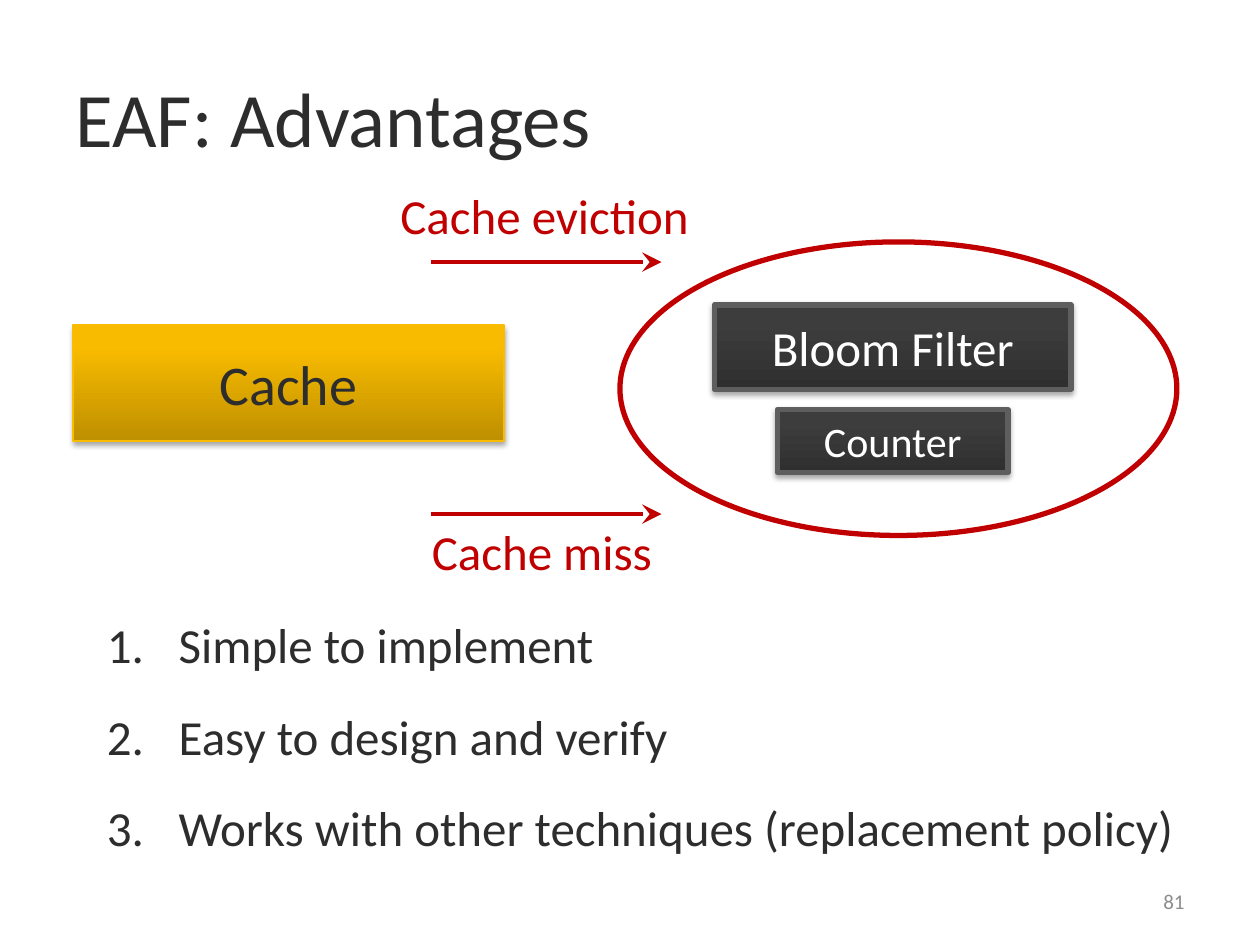
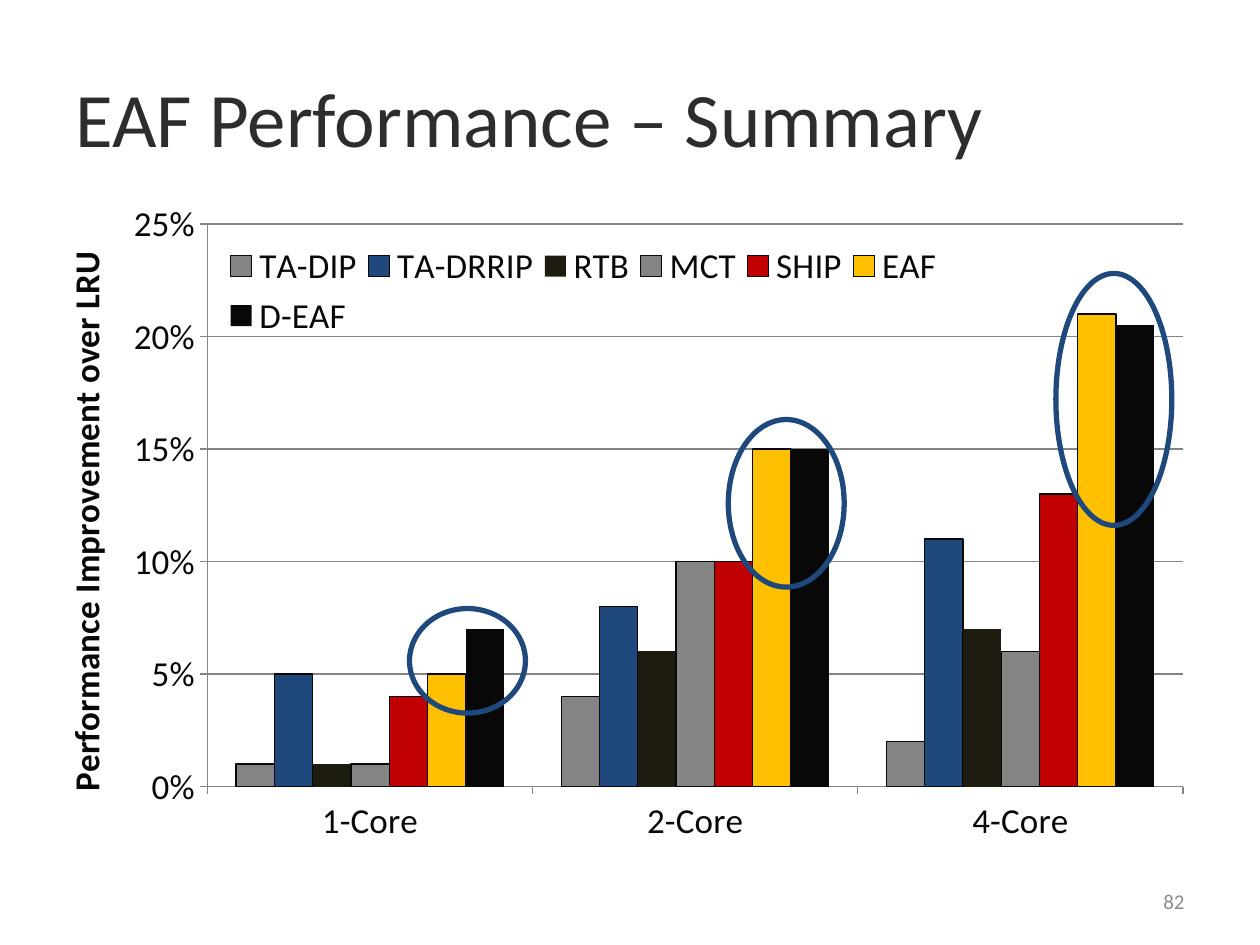
from lxml.etree import SubElement
from pptx import Presentation
from pptx.chart.data import CategoryChartData
from pptx.dml.color import RGBColor
from pptx.enum.chart import XL_CHART_TYPE as ChartType
from pptx.enum.chart import XL_LEGEND_POSITION as LegendPos
from pptx.enum.chart import XL_TICK_MARK as TickMark
from pptx.enum.shapes import MSO_CONNECTOR as Connector
from pptx.enum.shapes import MSO_SHAPE as Shape
from pptx.enum.text import MSO_ANCHOR as Anchor
from pptx.enum.text import MSO_AUTO_SIZE as AutoSize
from pptx.enum.text import PP_ALIGN as Align
from pptx.oxml.ns import qn
from pptx.util import Inches, Pt

# Shared look
FONT = "Calibri"
INK = RGBColor(0x2D, 0x2D, 0x2D)
WHITE = RGBColor(0xFF, 0xFF, 0xFF)
RED = RGBColor(0xC0, 0x00, 0x00)
NAVY = RGBColor(0x1F, 0x49, 0x7D)
NUMBER_GRAY = RGBColor(0x8C, 0x8C, 0x8C)
CHART_GRAY = RGBColor(0x84, 0x84, 0x84)
BLACK = RGBColor(0x08, 0x08, 0x08)
YELLOW = RGBColor(0xFF, 0xC0, 0x00)
OLIVE = RGBColor(0x1E, 0x1C, 0x11)

GOLD_BOX = {"bottom": RGBColor(0xBE, 0x8F, 0x00), "top": RGBColor(0xF8, 0xBB, 0x00),
            "edge": RGBColor(0xF9, 0xBC, 0x00), "edge_width": 0.75, "ink": INK}
DARK_BOX = {"bottom": RGBColor(0x2F, 0x2F, 0x2F), "top": RGBColor(0x3D, 0x3D, 0x3D),
            "edge": RGBColor(0x5E, 0x5E, 0x5E), "edge_width": 3, "ink": WHITE}

ADVANTAGES = ["Simple to implement", "Easy to design and verify",
              "Works with other techniques (replacement policy)"]
ADVANTAGE_WIDTHS = [4.1, 4.69, 8.76]

CORES = ["1-Core", "2-Core", "4-Core"]
# policy, improvement per core count, colour, outlined
POLICIES = [
    ("TA-DIP", (0.01, 0.04, 0.02), CHART_GRAY, True),
    ("TA-DRRIP", (0.05, 0.08, 0.11), NAVY, True),
    ("RTB", (0.01, 0.06, 0.07), OLIVE, False),
    ("MCT", (0.01, 0.1, 0.06), CHART_GRAY, True),
    ("SHIP", (0.04, 0.1, 0.13), RED, True),
    ("EAF", (0.05, 0.15, 0.21), YELLOW, True),
    ("D-EAF", (0.07, 0.15, 0.205), BLACK, False),
]


def place(*lengths):
    return [Inches(length) for length in lengths]


def set_font(font, size, color, **formats):
    font.color.rgb = color
    for name, value in {"name": FONT, "size": Pt(size), **formats}.items():
        setattr(font, name, value)


def write(frame, text, size, color, align=Align.LEFT):
    paragraph = frame.paragraphs[0]
    paragraph.alignment = align
    run = paragraph.add_run()
    run.text = text
    set_font(run.font, size, color)
    return paragraph


def add_titled_slide(prs, title_text, number):
    slide = prs.slides.add_slide(prs.slide_layouts[5])
    title = slide.shapes.title
    title.left, title.top, title.width, title.height = place(0.5, 0.3, 9, 1.25)
    title.text_frame.vertical_anchor = Anchor.MIDDLE
    title.text_frame.auto_size = AutoSize.NONE
    write(title.text_frame, title_text, 44, INK)

    footer = slide.shapes.add_textbox(*place(7.17, 6.95, 2.33, 0.4)).text_frame
    footer.word_wrap = True
    footer.vertical_anchor = Anchor.MIDDLE
    write(footer, str(number), 12, NUMBER_GRAY, Align.RIGHT)
    return slide


def add_label(slide, text, left, top, width, color):
    frame = slide.shapes.add_textbox(*place(left, top, width, 0.57)).text_frame
    frame.word_wrap = False
    frame.auto_size = AutoSize.SHAPE_TO_FIT_TEXT
    return write(frame, text, 28, color)


def add_numbered_label(slide, number, text, top, width):
    paragraph = add_label(slide, f"{number}.\t{text}", 0.75, top, width, INK)
    tabs = SubElement(paragraph._p.get_or_add_pPr(), qn("a:tabLst"))
    SubElement(tabs, qn("a:tab"), pos=str(Inches(0.57)), algn="l")


def add_block(slide, text, bounds, size, look):
    block = slide.shapes.add_shape(Shape.RECTANGLE, *place(*bounds))
    block.fill.gradient()
    block.fill.gradient_angle = 90
    stops = zip(block.fill.gradient_stops, (0, 0.8), (look["bottom"], look["top"]))
    for stop, position, color in stops:
        stop.position = position
        stop.color.rgb = color
    block.line.color.rgb = look["edge"]
    block.line.width = Pt(look["edge_width"])
    # Soft shadow straight below
    block.shadow.inherit = False
    effects = block._element.spPr.find(qn("a:effectLst"))
    shadow = SubElement(effects, qn("a:outerShdw"), blurRad=str(Pt(3.1)),
                        dist=str(Pt(1.8)), dir="5400000", rotWithShape="0")
    shade = SubElement(shadow, qn("a:srgbClr"), val="000000")
    SubElement(shade, qn("a:alpha"), val="35000")
    block.text_frame.vertical_anchor = Anchor.MIDDLE
    write(block.text_frame, text, size, look["ink"], Align.CENTER)


def add_ring(slide, bounds, color):
    ring = slide.shapes.add_shape(Shape.OVAL, *place(*bounds))
    ring.shadow.inherit = False
    ring.fill.background()
    ring.line.color.rgb = color
    ring.line.width = Pt(3)


def add_arrow(slide, left, right, y):
    arrow = slide.shapes.add_connector(Connector.STRAIGHT, *place(left, y, right, y))
    arrow.line.color.rgb = RED
    arrow.line.width = Pt(2.25)
    properties = arrow._element.spPr
    SubElement(properties.find(qn("a:ln")), qn("a:tailEnd"), type="stealth",
               w="lg", len="lg")
    SubElement(properties, qn("a:effectLst"))


def set_layout(parent, index, **values):
    """Place a chart part by fractions of the chart area."""
    for old in parent.findall(qn("c:layout")):
        parent.remove(old)
    layout = SubElement(parent, qn("c:layout"))
    parent.insert(index, layout)
    manual = SubElement(layout, qn("c:manualLayout"))
    for tag, value in values.items():
        SubElement(manual, qn(f"c:{tag}"), val=str(value))


def style_axis(axis):
    axis.major_tick_mark = TickMark.OUTSIDE
    axis.minor_tick_mark = TickMark.NONE
    axis.format.line.color.rgb = CHART_GRAY
    set_font(axis.tick_labels.font, 20, BLACK, bold=False)


def add_performance_chart(slide):
    data = CategoryChartData(number_format="0%")
    data.categories = CORES
    for policy, gains, _, _ in POLICIES:
        data.add_series(policy, gains)
    chart = slide.shapes.add_chart(ChartType.COLUMN_CLUSTERED,
                                   *place(0.34, 1.5, 9.33, 5.58), data).chart
    chart.has_title = False
    set_font(chart.font, 10, BLACK)

    # Bars
    plot = chart.plots[0]
    plot.gap_width = 150
    plot.vary_by_categories = False
    for series, (_, _, color, outlined) in zip(plot.series, POLICIES):
        series.format.fill.solid()
        series.format.fill.fore_color.rgb = color
        if outlined:
            series.format.line.color.rgb = BLACK
            series.format.line.width = Pt(0.75)

    # Axes
    style_axis(chart.category_axis)
    gain_axis = chart.value_axis
    style_axis(gain_axis)
    scale = {"minimum_scale": 0, "maximum_scale": 0.25, "major_unit": 0.05,
             "has_major_gridlines": True}
    for name, value in scale.items():
        setattr(gain_axis, name, value)
    gain_axis.major_gridlines.format.line.color.rgb = CHART_GRAY
    gain_axis.tick_labels.number_format = "0%"
    gain_axis.tick_labels.number_format_is_linked = False
    caption = gain_axis.axis_title.text_frame.paragraphs[0].add_run()
    caption.text = "Performance Improvement over LRU"
    set_font(caption.font, 20, BLACK, bold=True)

    # Legend and placement
    chart.has_legend = True
    legend = chart.legend
    legend.position = LegendPos.RIGHT
    legend.include_in_layout = False
    set_font(legend.font, 20, BLACK)
    plot_area = chart._chartSpace.chart.plotArea
    set_layout(plot_area, 0, layoutTarget="inner", xMode="edge", yMode="edge",
               x=0.14, y=0.05, w=0.83, h=0.8)
    set_layout(legend._element, 1, xMode="edge", yMode="edge",
               x=0.15, y=0.07, w=0.62, h=0.15)
    set_layout(gain_axis.axis_title._element, 1, xMode="edge", yMode="edge",
               x=0.01, y=0.08)


def build_advantages(prs):
    slide = add_titled_slide(prs, "EAF: Advantages", 81)
    # Cache and the filter that tracks evicted blocks
    add_block(slide, "Cache", (0.58, 2.58, 3.42, 0.92), 32, GOLD_BOX)
    add_block(slide, "Bloom Filter", (5.67, 2.42, 2.83, 0.67), 28, DARK_BOX)
    add_block(slide, "Counter", (6.17, 3.25, 1.83, 0.5), 24, DARK_BOX)
    # Numbered advantages
    for index, (text, width) in enumerate(zip(ADVANTAGES, ADVANTAGE_WIDTHS)):
        add_numbered_label(slide, index + 1, text, 4.83 + 0.725 * index, width)
    # Events between cache and filter
    add_ring(slide, (4.92, 1.92, 4.42, 2.33), RED)
    add_label(slide, "Cache eviction", 3.08, 1.42, 2.52, RED)
    add_label(slide, "Cache miss", 3.33, 4.09, 1.97, RED)
    for y in (2.08, 4.08):
        add_arrow(slide, 3.42, 5.25, y)


def build_performance(prs):
    slide = add_titled_slide(prs, "EAF Performance – Summary", 82)
    add_performance_chart(slide)
    # Rings around the EAF and D-EAF bars
    for left, top, height in ((3.25, 4.83, 0.83), (5.78, 3.33, 1.33), (8.38, 2.17, 2)):
        add_ring(slide, (left, top, 0.92, height), NAVY)


def main():
    prs = Presentation()
    prs.slide_width, prs.slide_height = place(10, 7.5)
    build_advantages(prs)
    build_performance(prs)
    prs.save("out.pptx")


if __name__ == "__main__":
    main()
